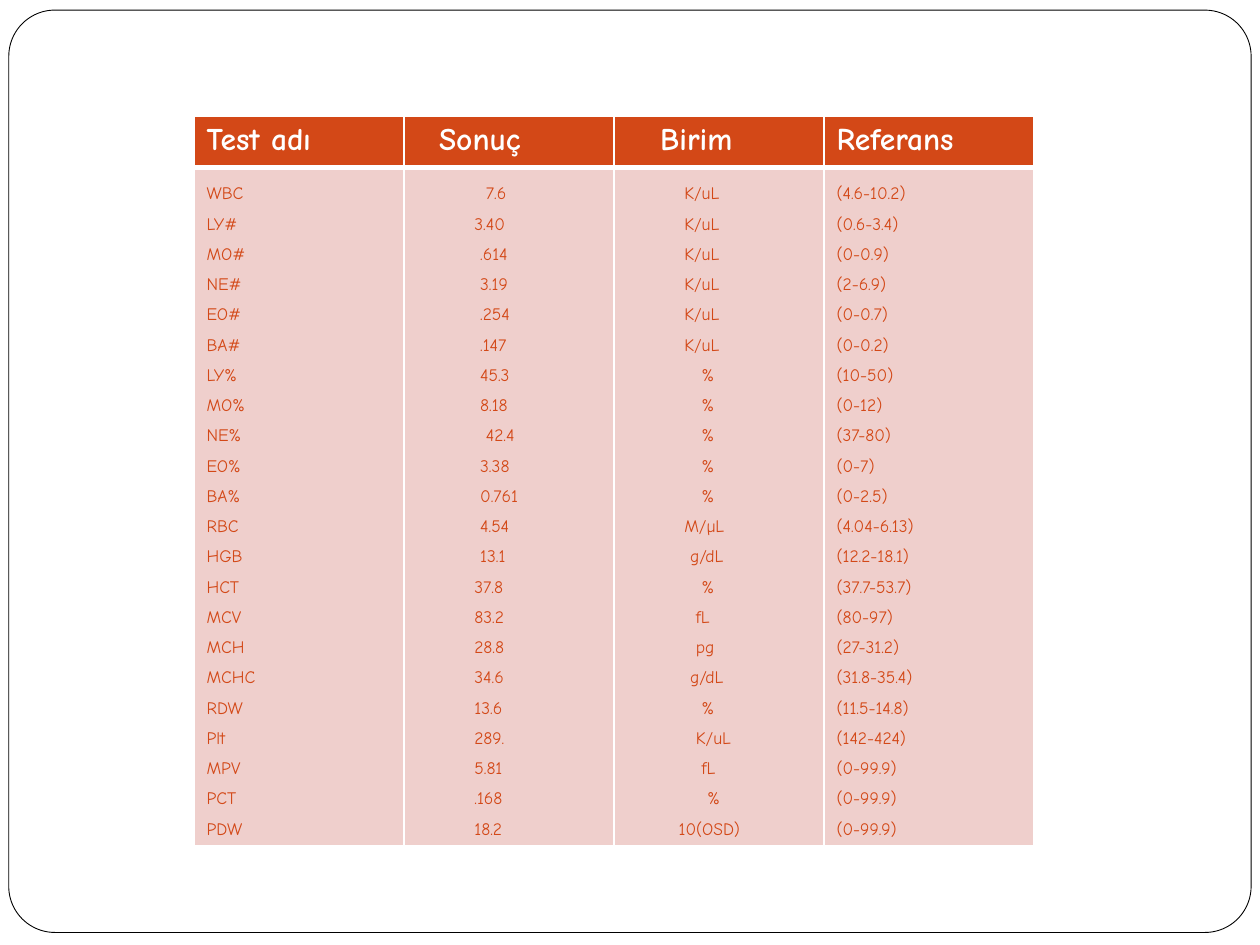
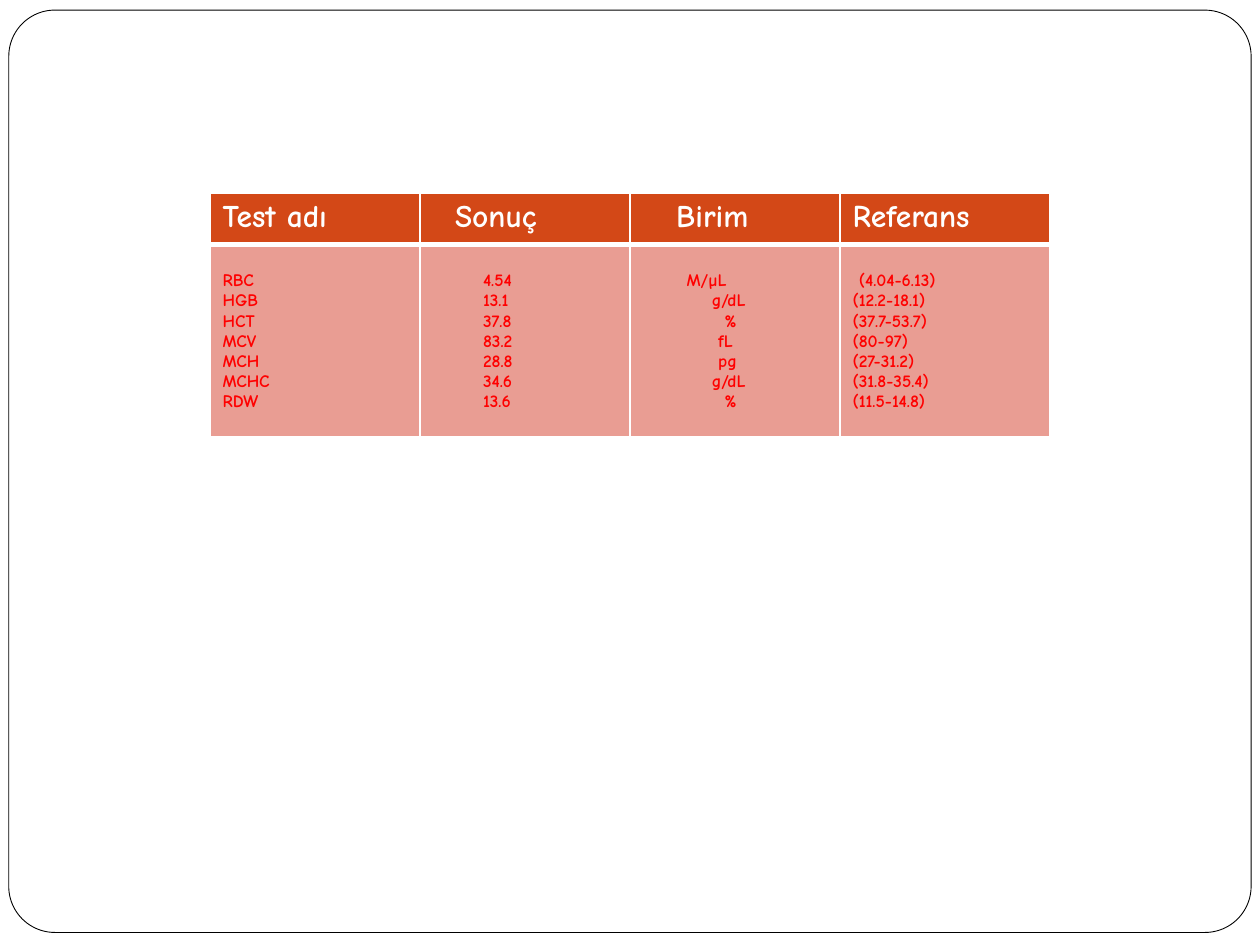
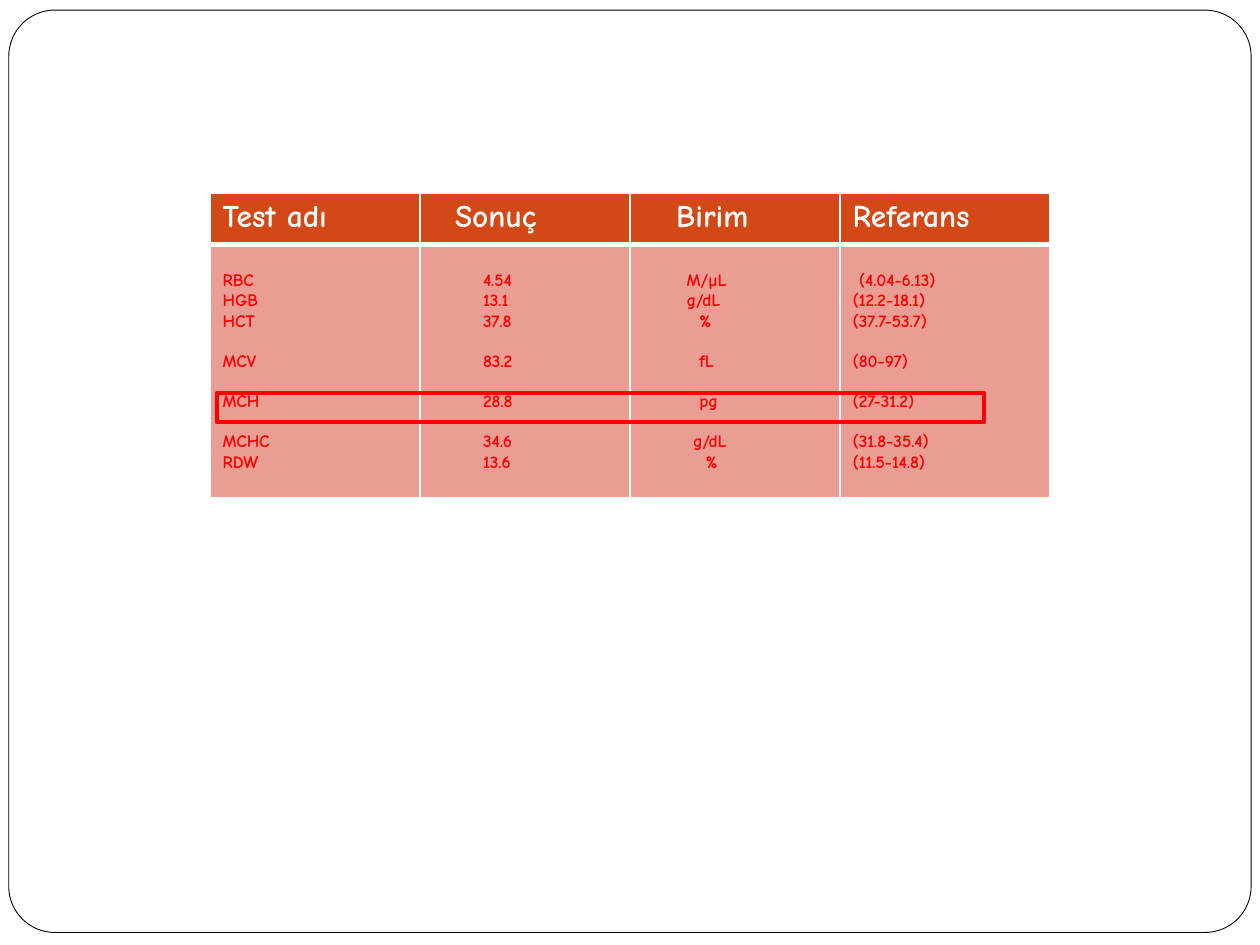
"""Build three slides of blood count results in framed tables."""
import dataclasses
import lxml.etree
import pptx
import pptx.dml.color
import pptx.enum.shapes
import pptx.oxml.ns
import pptx.util


@dataclasses.dataclass
class Theme:
    face: str = "Comic Neue"
    white: str = "FFFFFF"
    black: str = "000000"
    rust: str = "D34817"
    red: str = "FF0000"
    pale: str = "EFCFCC"
    rose: str = "E99D93"
    big: float = 18
    small: float = 10
    thin: float = 1
    thick: float = 3
    gap: float = 11.5


theme = Theme()
rgb = pptx.dml.color.RGBColor.from_string
point = pptx.util.Pt

deck = pptx.Presentation()
deck.slide_width = pptx.util.Inches(10)
deck.slide_height = pptx.util.Inches(7.5)
wide, high = deck.slide_width / 100, deck.slide_height / 100

heads = [("Test adı", 0), ("Sonuç", 2), ("Birim", 3), ("Referans", 0)]
tests = [
    ("WBC", "7.6", "K/uL", "(4.6-10.2)"),
    ("LY#", "3.40", "K/uL", "(0.6-3.4)"),
    ("MO#", ".614", "K/uL", "(0-0.9)"),
    ("NE#", "3.19", "K/uL", "(2-6.9)"),
    ("EO#", ".254", "K/uL", "(0-0.7)"),
    ("BA#", ".147", "K/uL", "(0-0.2)"),
    ("LY%", "45.3", "%", "(10-50)"),
    ("MO%", "8.18", "%", "(0-12)"),
    ("NE%", "42.4", "%", "(37-80)"),
    ("EO%", "3.38", "%", "(0-7)"),
    ("BA%", "0.761", "%", "(0-2.5)"),
    ("RBC", "4.54", "M/µL", "(4.04-6.13)"),
    ("HGB", "13.1", "g/dL", "(12.2-18.1)"),
    ("HCT", "37.8", "%", "(37.7-53.7)"),
    ("MCV", "83.2", "fL", "(80-97)"),
    ("MCH", "28.8", "pg", "(27-31.2)"),
    ("MCHC", "34.6", "g/dL", "(31.8-35.4)"),
    ("RDW", "13.6", "%", "(11.5-14.8)"),
    ("Plt", "289.", "K/uL", "(142-424)"),
    ("MPV", "5.81", "fL", "(0-99.9)"),
    ("PCT", ".168", "%", "(0-99.9)"),
    ("PDW", "18.2", "10(OSD)", "(0-99.9)"),
]
cells = tests[11:18]

full = dict(
    rows=tests, left=15.4, top=12.27, tall=71.6, fill=theme.pale, ink=theme.rust,
    bold=False, step=3.3, lead=1.5, inset=3.6, gaps=(),
    shift=[[0] * 22,
           [12, 10] + [11] * 6 + [12] + [11] * 4 + [10] * 9,
           [10] * 6 + [13] * 5 + [10, 11, 13, 12, 12, 11, 13, 12, 13, 14, 9],
           [0] * 22])
short = dict(
    rows=cells, left=16.67, top=20.4, tall=20.4, fill=theme.rose, ink=theme.red,
    bold=True, step=3.6, lead=1, inset=15.1, gaps=(),
    shift=[[0] * 7, [8] * 7, [7, 11, 13, 12, 12, 11, 13], [1] + [0] * 6])
spaced = short | dict(
    tall=26.8, gaps=("MCV", "MCH", "MCHC"),
    shift=[[0] * 7, [8] * 7, [7, 7, 9, 9, 9, 8, 10], [1] + [0] * 6])


def outline(slide, kind, left, top, width, height, fill, ink, weight):
    """Add a lined shape placed in hundredths of the slide."""
    shape = slide.shapes.add_shape(
        kind, int(left * wide), int(top * high), int(width * wide), int(height * high))
    shape.shadow.inherit = False
    if fill:
        shape.fill.solid()
        shape.fill.fore_color.rgb = rgb(fill)
    else:
        shape.fill.background()
    shape.line.color.rgb = rgb(ink)
    shape.line.width = point(weight)
    return shape


def fill_cell(cell, lines, look, fill, ink, step, edges):
    """Write indented lines in a cell and set its fill and borders."""
    cell.fill.solid()
    cell.fill.fore_color.rgb = rgb(fill)
    for spot, (side, weight) in enumerate(edges.items()):
        line = lxml.etree.Element(pptx.oxml.ns.qn("a:ln" + side), w=str(point(weight)))
        paint = lxml.etree.SubElement(line, pptx.oxml.ns.qn("a:solidFill"))
        lxml.etree.SubElement(paint, pptx.oxml.ns.qn("a:srgbClr"), val=theme.white)
        cell._tc.get_or_add_tcPr().insert(spot, line)
    for spot, (text, shift, form) in enumerate(lines):
        frame = cell.text_frame
        para = frame.add_paragraph() if spot else frame.paragraphs[0]
        para._p.get_or_add_pPr().set("marL", str(point(shift * step)))
        run = para.add_run()
        run.text = text
        run.font.color.rgb = rgb(ink)
        for item, values in ((para, form), (run.font, look)):
            for name, value in values.items():
                setattr(item, name, value)


kinds = pptx.enum.shapes.MSO_SHAPE
edge = dict(L=theme.thin, R=theme.thin, T=theme.thin, B=theme.thin)
title = dict(name=theme.face, size=point(theme.big), bold=True)

for plan in (full, short, spaced):
    slide = deck.slides.add_slide(deck.slide_layouts[6])
    frame = outline(slide, kinds.ROUNDED_RECTANGLE, 0.7, 1.07, 98.6, 97.6,
                    theme.white, theme.black, 0.5)
    frame.adjustments[0] = 0.05
    grid = slide.shapes.add_table(
        2, 4, int(plan["left"] * wide), int(plan["top"] * high),
        int(deck.slide_width * 2 / 3), int((5.47 + plan["tall"]) * high)).table
    grid.horz_banding = False
    for row, share in zip(grid.rows, (5.47, plan["tall"])):
        row.height = int(share * high)
    body = dict(name=theme.face, size=point(theme.small), bold=plan["bold"])
    for col, (head, shift) in enumerate(heads):
        fill_cell(grid.cell(0, col), [(head, shift, {})], title,
                  theme.rust, theme.white, 6.4, edge | dict(B=theme.thick))
        lines = []
        for test, move in zip(plan["rows"], plan["shift"][col]):
            form = dict(line_spacing=plan["lead"])
            if test[0] in plan["gaps"]:
                form["space_before"] = point(theme.gap)
            lines.append((test[col], move, form))
        cell = grid.cell(1, col)
        fill_cell(cell, lines, body, plan["fill"], plan["ink"], plan["step"],
                  edge | dict(T=theme.thick))
        cell.margin_top = point(plan["inset"])

outline(slide, kinds.RECTANGLE, 17.2, 41.6, 60.9, 3.07, None, theme.red, 2.25)
deck.save("out.pptx")
